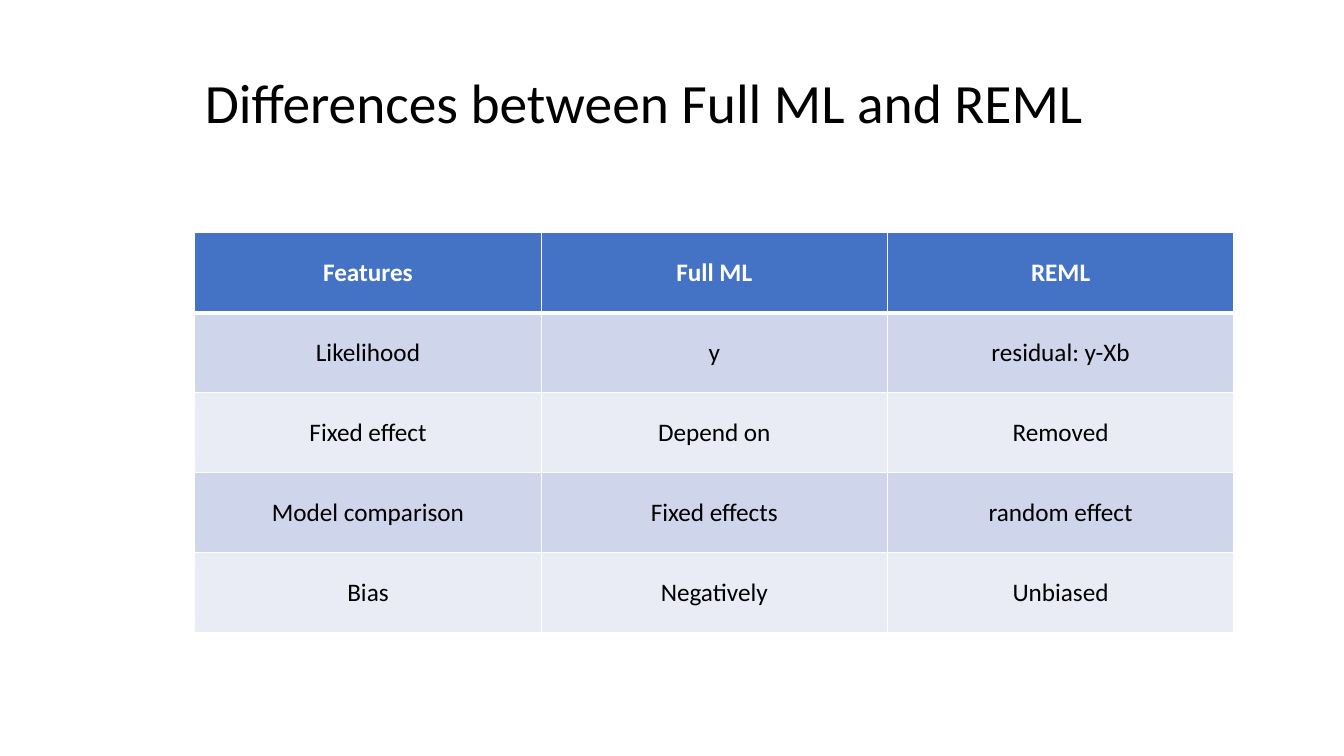
from dataclasses import dataclass

from lxml import etree
from pptx import Presentation
from pptx import util as u
from pptx.dml.color import RGBColor
from pptx.enum import text
from pptx.oxml import ns

SLIDE_WIDTH = u.Inches(13.33)
SLIDE_HEIGHT = u.Inches(7.5)
FONT = "Calibri"
COLOURS = {
    "header": "4472C4",
    "odd": "CFD5EA",
    "even": "E9EBF5",
    "rule": "FFFFFF",
    "heading": "FFFFFF",
    "ink": "000000",
}


@dataclass(frozen=True)
class Area:
    left: float
    top: float
    width: float
    height: float

    def box(self) -> tuple[int, int, int, int]:
        return (
            round(self.left * SLIDE_WIDTH),
            round(self.top * SLIDE_HEIGHT),
            round(self.width * SLIDE_WIDTH),
            round(self.height * SLIDE_HEIGHT),
        )


@dataclass(frozen=True)
class Feature:
    name: str
    full_ml: str
    reml: str


@dataclass(frozen=True)
class Style:
    size: float
    colour: str
    bold: bool = False


TITLE_AREA = Area(0.145, 0.05, 0.71, 0.18)
COMPARISON_AREA = Area(0.145, 0.308, 0.773, 0.529)
TITLE_STYLE = Style(39.6, "ink")
HEADING_STYLE = Style(18, "heading", True)
BODY_STYLE = Style(18, "ink")
FEATURES = [
    Feature("Features", "Full ML", "REML"),
    Feature("Likelihood", "y", "residual: y-Xb"),
    Feature("Fixed effect", "Depend on", "Removed"),
    Feature("Model comparison", "Fixed effects", "random effect"),
    Feature("Bias", "Negatively", "Unbiased"),
]


def write(frame, wording: str, style: Style, align) -> None:
    frame.text = wording
    paragraph = frame.paragraphs[0]
    paragraph.alignment = align
    font = paragraph.runs[0].font
    font.name = FONT
    font.size = u.Pt(style.size)
    font.bold = style.bold
    font.color.rgb = RGBColor.from_string(COLOURS[style.colour])


def add_rule(cell, side: str, points: float) -> None:
    properties = cell._tc.get_or_add_tcPr()
    line = etree.SubElement(properties, ns.qn(f"a:ln{side}"), w=str(u.Pt(points)))
    fill = etree.SubElement(line, ns.qn("a:solidFill"))
    etree.SubElement(fill, ns.qn("a:srgbClr"), val=COLOURS["rule"])


def add_title(slide, wording: str) -> None:
    title = slide.shapes.add_textbox(*TITLE_AREA.box())
    frame = title.text_frame
    frame.word_wrap = True
    frame.vertical_anchor = text.MSO_ANCHOR.MIDDLE
    write(frame, wording, TITLE_STYLE, text.PP_ALIGN.LEFT)
    frame.paragraphs[0].line_spacing = 0.9


def fill_cell(cell, wording: str, row: int) -> None:
    for side in "LRTB":
        below_header = (row, side) in ((0, "B"), (1, "T"))
        add_rule(cell, side, 3 if below_header else 1)
    band = "header" if row == 0 else "odd" if row % 2 else "even"
    cell.fill.solid()
    cell.fill.fore_color.rgb = RGBColor.from_string(COLOURS[band])
    cell.vertical_anchor = text.MSO_ANCHOR.MIDDLE
    style = HEADING_STYLE if row == 0 else BODY_STYLE
    write(cell.text_frame, wording, style, text.PP_ALIGN.CENTER)


def add_comparison(slide, features: list[Feature]) -> None:
    frame = slide.shapes.add_table(len(features), 3, *COMPARISON_AREA.box())
    for row, feature in enumerate(features):
        for column, wording in enumerate((feature.name, feature.full_ml, feature.reml)):
            fill_cell(frame.table.cell(row, column), wording, row)


def main() -> None:
    deck = Presentation()
    deck.slide_width = SLIDE_WIDTH
    deck.slide_height = SLIDE_HEIGHT
    slide = deck.slides.add_slide(deck.slide_layouts[6])
    add_comparison(slide, FEATURES)
    add_title(slide, "Differences between Full ML and REML")
    deck.save("out.pptx")


if __name__ == "__main__":
    main()
